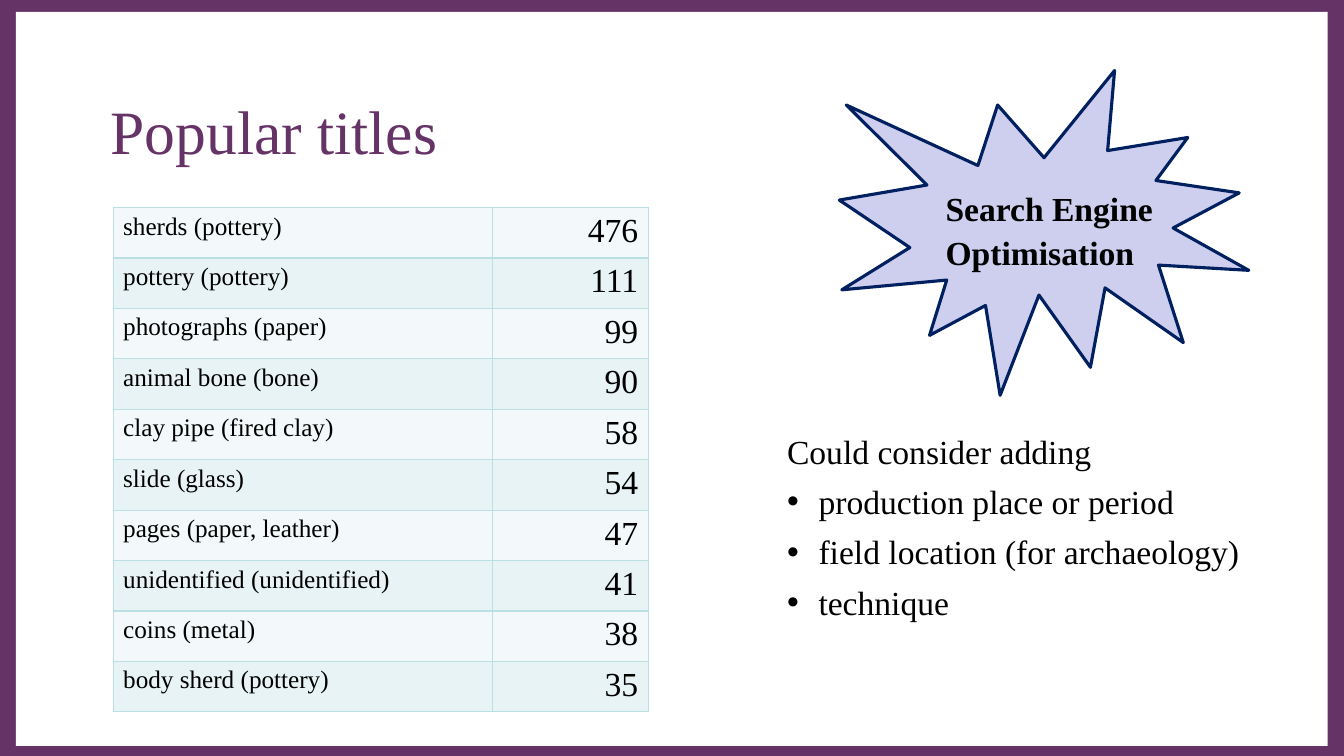
from lxml.etree import SubElement
from pptx import Presentation
from pptx.dml.color import RGBColor
from pptx.enum.shapes import MSO_SHAPE
from pptx.enum.text import MSO_ANCHOR, PP_ALIGN
from pptx.oxml.ns import qn
from pptx.util import Pt

COLOURS = {
    "plum": "663366", "white": "FFFFFF", "black": "000000",
    "row_light": "F3F9FA", "row_dark": "E7F3F4", "grid": "BBE0E3",
    "burst": "CECEEF", "navy": "002060",
}
FONT = "Times New Roman"


def colour(name):
    return RGBColor.from_string(COLOURS[name])


class SlideBuilder:
    def __init__(self, slide):
        self.slide = slide

    def add_run(self, paragraph, text, size, ink="black", bold=False):
        run = paragraph.add_run()
        run.text = text
        run.font.name = FONT
        run.font.size = Pt(size)
        run.font.bold = bold
        run.font.color.rgb = colour(ink)

    def shape(self, preset, box, fill, line=None):
        shape = self.slide.shapes.add_shape(preset, *map(Pt, box))
        shape.shadow.inherit = False
        shape.fill.solid()
        shape.fill.fore_color.rgb = colour(fill)
        if line:
            shape.line.color.rgb = colour(line)
            shape.line.width = Pt(2.25)
        else:
            shape.line.fill.background()

    def text(self, box, lines, size, ink="black", bold=False, gap=0,
             bullets_from=None, anchor=MSO_ANCHOR.TOP):
        frame = self.slide.shapes.add_textbox(*map(Pt, box)).text_frame
        frame.word_wrap = True
        frame.vertical_anchor = anchor
        for index, line in enumerate(lines):
            paragraph = frame.add_paragraph() if index else frame.paragraphs[0]
            if bullets_from is not None and index >= bullets_from:
                self.bullet(paragraph)
            if index:
                paragraph.space_before = Pt(gap)
            self.add_run(paragraph, line, size, ink, bold)

    def bullet(self, paragraph, indent=22.5):
        properties = paragraph._p.get_or_add_pPr()
        properties.set("marL", str(Pt(indent)))
        properties.set("indent", str(-Pt(indent)))
        SubElement(properties, qn("a:buFont"), typeface="Arial")
        SubElement(properties, qn("a:buChar"), char="•")

    def table(self, left, top, widths, row_height, rows):
        table = self.slide.shapes.add_table(
            len(rows), len(widths), Pt(left), Pt(top),
            Pt(sum(widths)), Pt(row_height * len(rows))).table
        table.first_row = False
        for column, width in zip(table.columns, widths):
            column.width = Pt(width)
        for index, (title, count) in enumerate(rows):
            table.rows[index].height = Pt(row_height)
            fill = "row_dark" if index % 2 else "row_light"
            self.cell(table.cell(index, 0), title, 18, PP_ALIGN.LEFT, fill)
            self.cell(table.cell(index, 1), str(count), 24, PP_ALIGN.RIGHT, fill)

    def cell(self, cell, text, size, alignment, fill):
        paragraph = cell.text_frame.paragraphs[0]
        paragraph.alignment = alignment
        self.add_run(paragraph, text, size)
        # Borders come before the fill in the cell properties
        properties = cell._tc.get_or_add_tcPr()
        for side in ("a:lnL", "a:lnR", "a:lnT", "a:lnB"):
            border = SubElement(properties, qn(side), w=str(Pt(1)))
            solid = SubElement(border, qn("a:solidFill"))
            SubElement(solid, qn("a:srgbClr"), val=COLOURS["grid"])
        cell.fill.solid()
        cell.fill.fore_color.rgb = colour(fill)


def main():
    presentation = Presentation()
    presentation.slide_width = Pt(960)
    presentation.slide_height = Pt(540)
    builder = SlideBuilder(
        presentation.slides.add_slide(presentation.slide_layouts[6]))

    # Frame and title
    builder.shape(MSO_SHAPE.RECTANGLE, (0, 0, 960, 540), "plum")
    builder.shape(MSO_SHAPE.RECTANGLE, (11.4, 8.5, 937, 524.3), "white")
    builder.text((72, 48, 816, 90), ["Popular titles"], 44, "plum",
                 anchor=MSO_ANCHOR.MIDDLE)

    # Title counts
    title_counts = [
        ("sherds (pottery)", 476),
        ("pottery (pottery)", 111),
        ("photographs (paper)", 99),
        ("animal bone (bone)", 90),
        ("clay pipe (fired clay)", 58),
        ("slide (glass)", 54),
        ("pages (paper, leather)", 47),
        ("unidentified (unidentified)", 41),
        ("coins (metal)", 38),
        ("body sherd (pottery)", 35),
    ]
    builder.table(80.8, 148.2, (271, 111.3), 33.8, title_counts)

    # Search engine burst
    builder.shape(MSO_SHAPE.EXPLOSION1, (599.5, 50.4, 292.5, 232),
                  "burst", "navy")
    builder.text((668.3, 131, 168, 65.5), ["Search Engine", "Optimisation"],
                 24, bold=True, gap=2)

    # Suggestions
    builder.text((555.1, 304, 344, 170), [
        "Could consider adding",
        "production place or period",
        "field location (for archaeology)",
        "technique",
    ], 24, gap=7.2, bullets_from=1)

    presentation.save("out.pptx")


if __name__ == "__main__":
    main()
